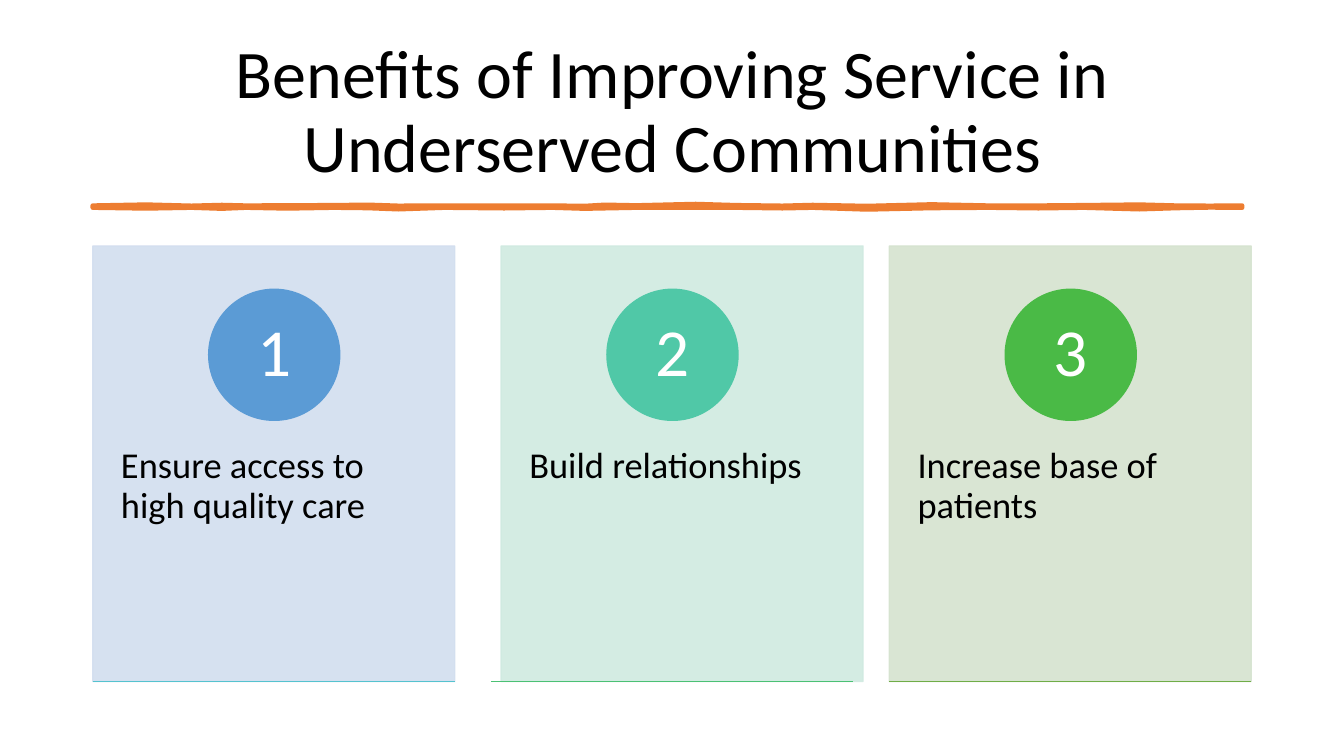
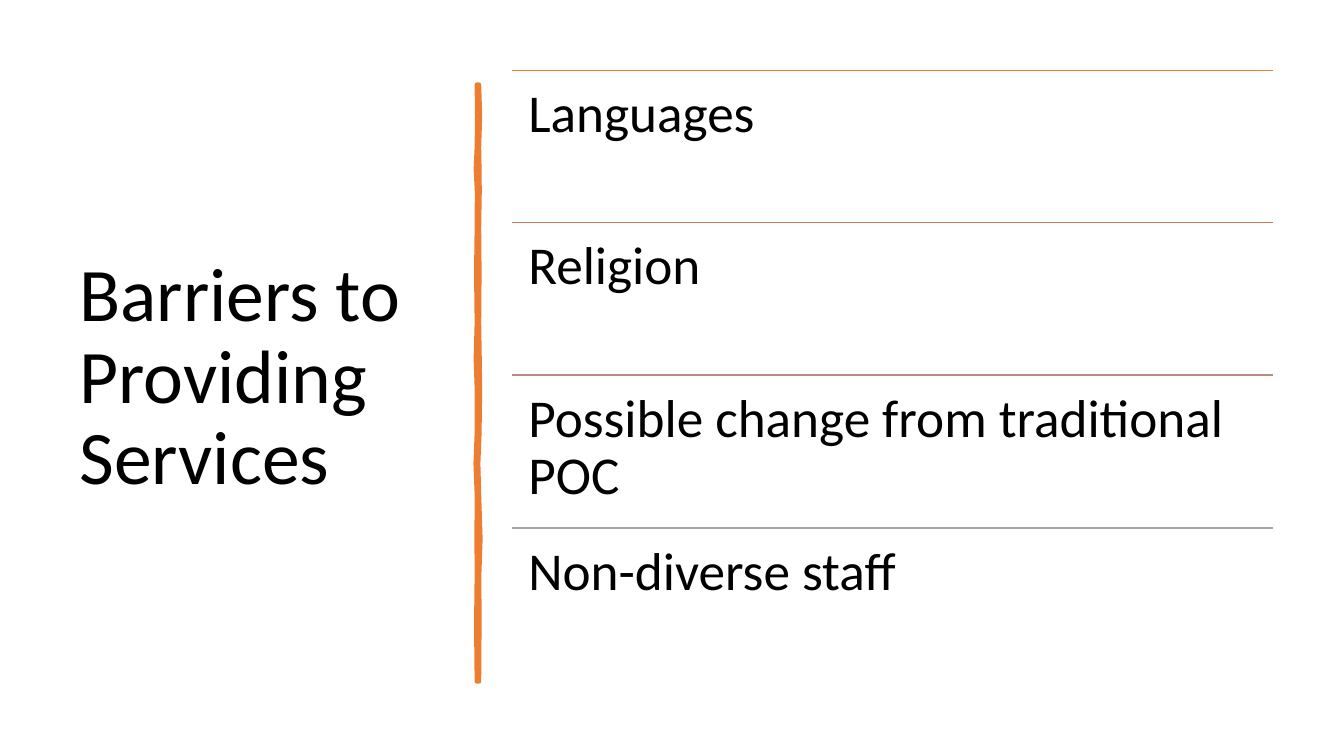
import pptx
import pptx.util
import pptx.dml.color
import pptx.enum.shapes
import pptx.enum.text
import pptx.oxml.ns
import lxml.etree

PX = 9144  # 100 px to the inch
FONT = "Calibri"
COLORS = {
    "ink": "000000", "white": "FFFFFF", "accent": "ED7D31",
    "blue": "5B9BD5", "blue pale": "D2DEEF", "blue rule": "55C3CF",
    "teal": "50C8A7", "teal pale": "D0EAE1", "teal rule": "4BC174",
    "green": "4ABA46", "green pale": "D5E3CF", "green rule": "70AD47",
    "rust": "D17B5C", "mauve": "B98A82", "grey": "A5A5A5",
}
ALIGN = pptx.enum.text.PP_ALIGN
ANCHOR = pptx.enum.text.MSO_ANCHOR
SHAPE = pptx.enum.shapes.MSO_SHAPE

CARDS = [
    ("Ensure access to high quality care", "blue", 0),
    ("Build relationships", "teal", 10),
    ("Increase base of patients", "green", 0),
]
ROWS = [
    ("Languages", "accent"),
    ("Religion", "rust"),
    ("Possible change from traditional POC", "mauve"),
    ("Non-diverse staff", "grey"),
]
# Brush edges: px along the stroke, then both edges in tenths of a px off its centre
ACROSS = [
    (92, -10, 10), (145, -20, 18), (190, -8, 10), (220, -16, 20),
    (244, -10, 10), (285, -12, 18), (331, -14, 10), (365, -18, 14),
    (395, -8, 26), (441, -10, 10), (500, -10, 16), (548, -10, 10),
    (580, -6, 20), (600, -18, 16), (631, -12, 10), (690, -26, 10),
    (730, -14, 10), (776, -8, 16), (806, -16, 10), (860, -6, 28),
    (924, -22, 14), (981, -10, 10), (1030, -10, 16), (1075, -14, 10),
    (1130, -20, 26), (1167, -10, 14), (1200, -8, 8), (1232, -10, 10),
]
DOWN = [
    (84, -10, 10), (115, -6, 20), (146, -10, 10), (168, -20, 14),
    (190, -8, 16), (226, -10, 10), (270, -16, 14), (320, -10, 10),
    (356, -20, 16), (385, -10, 20), (430, -10, 14), (460, -22, 2),
    (490, -10, 10), (535, -12, 24), (570, -10, 12), (620, -16, 14),
    (676, -10, 10),
]


def rgb(name):
    return pptx.dml.color.RGBColor.from_string(COLORS[name])


def box(px):
    return [n * PX for n in px]


def write(shape, text, size, color="ink", align=ALIGN.LEFT,
          anchor=ANCHOR.TOP, pad=(10, 5, 10, 5)):
    """Set and style the text; pad runs left, top, right, bottom."""
    frame = shape.text_frame
    frame.text = text
    frame.word_wrap = True
    frame.vertical_anchor = anchor
    (frame.margin_left, frame.margin_top,
     frame.margin_right, frame.margin_bottom) = box(pad)
    for para in frame.paragraphs:
        para.alignment = align
        para.line_spacing = 0.9
        for run in para.runs:
            run.font.name = FONT
            run.font.size = pptx.util.Pt(size)
            run.font.color.rgb = rgb(color)


def label(slide, px, text, size, **style):
    write(slide.shapes.add_textbox(*box(px)), text, size, **style)


def paint(shape, color, width=1):
    shape.shadow.inherit = False
    shape.fill.solid()
    shape.fill.fore_color.rgb = rgb(color)
    shape.line.color.rgb = rgb(color)
    shape.line.width = pptx.util.Pt(width)


def fade(shape, share):
    """Give fill and line an opacity in percent."""
    for node in shape._element.spPr.iter(pptx.oxml.ns.qn("a:srgbClr")):
        alpha = lxml.etree.SubElement(node, pptx.oxml.ns.qn("a:alpha"))
        alpha.set("val", str(share * 1000))


def rule(slide, left, top, width, color):
    line = slide.shapes.add_connector(
        pptx.enum.shapes.MSO_CONNECTOR.STRAIGHT,
        *box((left, top, left + width, top)))
    line.line.color.rgb = rgb(color)
    line.line.width = pptx.util.Pt(1)
    lxml.etree.SubElement(line._element.spPr, pptx.oxml.ns.qn("a:effectLst"))


def brush(slide, edges, mid, upright=False):
    """Draw an uneven brush stroke centred on mid."""
    near = [(at * 10, mid * 10 + low) for at, low, high in edges]
    far = [(at * 10, mid * 10 + high) for at, low, high in reversed(edges)]
    points = [(y, x) if upright else (x, y) for x, y in near + far]
    path = slide.shapes.build_freeform(*points[0], scale=PX / 10)
    path.add_line_segments(points[1:], close=True)
    shape = path.convert_to_shape()
    paint(shape, "accent", 3.25)
    lxml.etree.SubElement(shape.line._get_or_add_ln(),
                          pptx.oxml.ns.qn("a:round"))


def card(slide, index, text, hue, shift):
    left = 92 + 395 * index
    panel = slide.shapes.add_shape(
        SHAPE.RECTANGLE, *box((left + shift, 244, 359, 432)))
    paint(panel, hue + " pale")
    fade(panel, 90)
    write(panel, text, 26, pad=(28, 200, 28, 36))
    disc = slide.shapes.add_shape(
        SHAPE.OVAL, *box((left + 115, 287, 130, 130)))
    paint(disc, hue)
    write(disc, str(index + 1), 48, color="white", align=ALIGN.CENTER,
          anchor=ANCHOR.MIDDLE, pad=(10, 1, 10, 1))
    rule(slide, left, 676, 359, hue + " rule")


def gains(slide):
    label(slide, (92, 40, 1150, 145),
          "Benefits of Improving Service in Underserved Communities", 48.6,
          align=ALIGN.CENTER, anchor=ANCHOR.MIDDLE)
    brush(slide, ACROSS, 205)
    for index, item in enumerate(CARDS):
        card(slide, index, *item)


def limits(slide):
    label(slide, (69, 70, 374, 611), "Barriers to Providing Services", 54,
          anchor=ANCHOR.MIDDLE)
    brush(slide, DOWN, 474, upright=True)
    for index, (text, color) in enumerate(ROWS):
        top = 70 + round(605 * index / len(ROWS))
        rule(slide, 508, top, 755, color)
        label(slide, (508, top, 755, 151), text, 38, pad=(16, 16, 16, 16))


def main():
    deck = pptx.Presentation()
    deck.slide_width, deck.slide_height = box((1333, 750))
    for draw in (gains, limits):
        draw(deck.slides.add_slide(deck.slide_layouts[6]))
    deck.save("out.pptx")


if __name__ == "__main__":
    main()
